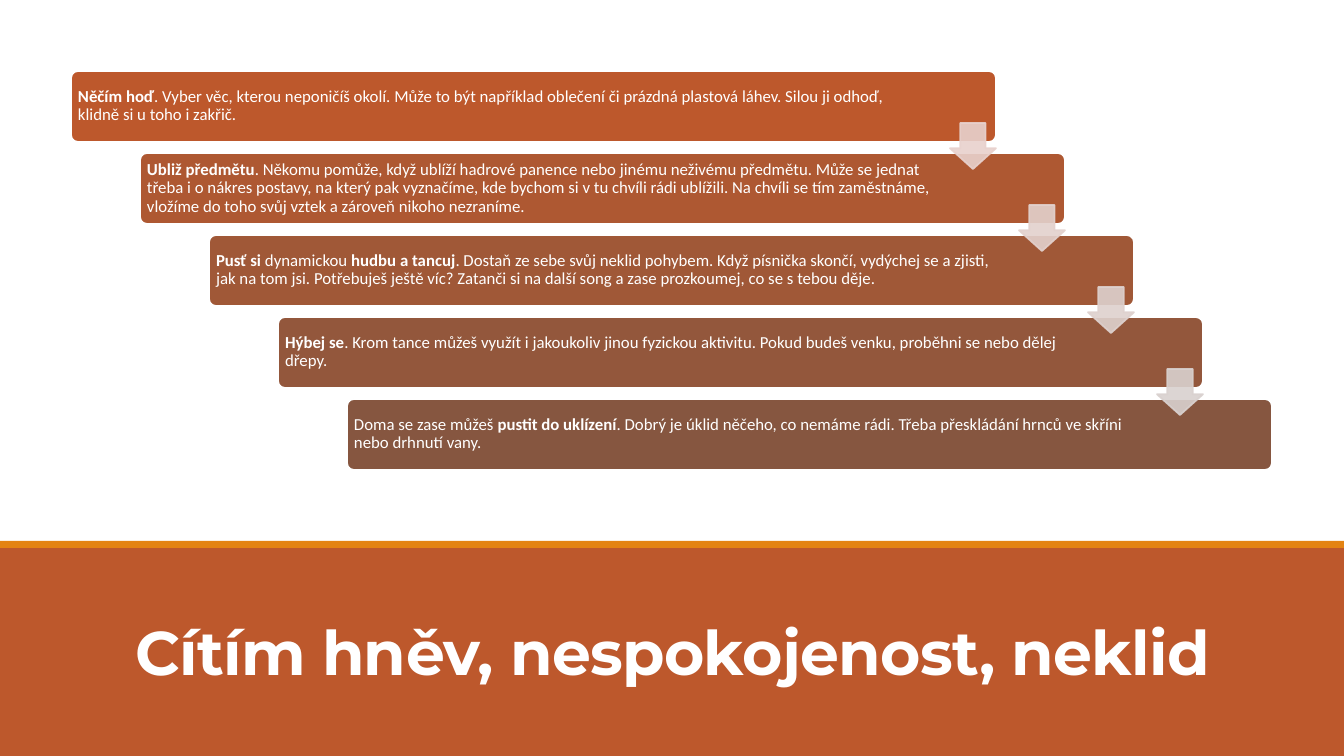
import lxml.etree
import pptx
import pptx.dml.color
import pptx.enum.shapes
import pptx.enum.text
import pptx.oxml.ns
import pptx.util

EMU_PER_PX = 914400 / 100.8
SHAPES = pptx.enum.shapes.MSO_SHAPE
ANCHOR = pptx.enum.text.MSO_ANCHOR


def px(*lengths):
    return [pptx.util.Emu(round(length * EMU_PER_PX)) for length in lengths]


def color(hex_string):
    return pptx.dml.color.RGBColor.from_string(hex_string)


presentation = pptx.Presentation()
presentation.slide_width, presentation.slide_height = px(1344, 756)
slide = presentation.slides.add_slide(presentation.slide_layouts[5])

# Title band with its accent stripe
for top, height, fill in [(546, 210, "BD582C"), (541, 7, "E48312")]:
    band = slide.shapes.add_shape(SHAPES.RECTANGLE, *px(0, top, 1344, height))
    band.shadow.inherit = False
    band.fill.solid()
    band.fill.fore_color.rgb = color(fill)
    band.line.fill.background()

# Title, lifted in front of the band
title = slide.shapes.title
slide.shapes._spTree.append(title._element)
title.left, title.top, title.width, title.height = px(118, 579, 1109, 114)
title.text_frame.text = "Cítím hněv, nespokojenost, neklid"
title.text_frame.word_wrap = True
title.text_frame.auto_size = pptx.enum.text.MSO_AUTO_SIZE.NONE
title.text_frame.vertical_anchor = ANCHOR.BOTTOM
paragraph = title.text_frame.paragraphs[0]
paragraph.alignment = pptx.enum.text.PP_ALIGN.CENTER
paragraph.line_spacing = 0.85
run = paragraph.runs[0]
run.font.name = "Montserrat"
run.font.size = pptx.util.Pt(44)
run.font.bold = True
run.font.color.rgb = color("FFFFFF")
run._r.get_or_add_rPr().set("spc", "-50")

# Steps: bar fill, text width, then text pieces as (text, bold)
steps = [
    ("BD582C", 840, [
        ("Něčím hoď", True),
        (". Vyber věc, kterou neponičíš okolí. Může to být například oblečení či "
         "prázdná plastová láhev. Silou ji odhoď, klidně si u toho i zakřič.", False)]),
    ("AE5832", 805, [
        ("Ubliž předmětu", True),
        (". Někomu pomůže, když ublíží hadrové panence nebo jinému neživému předmětu. "
         "Může se jednat třeba i o nákres postavy, na který pak vyznačíme, kde bychom "
         "si v tu chvíli rádi ublížili. Na chvíli se tím zaměstnáme, vložíme do toho "
         "svůj vztek a zároveň nikoho nezraníme.", False)]),
    ("A05837", 805, [
        ("Pusť si", True),
        (" dynamickou ", False),
        ("hudbu a tancuj", True),
        (". Dostaň ze sebe svůj neklid pohybem. Když písnička skončí, vydýchej se a "
         "zjisti, jak na tom jsi. Potřebuješ ještě víc? Zatanči si na další song a "
         "zase prozkoumej, co se s tebou děje.", False)]),
    ("93573C", 805, [
        ("Hýbej se", True),
        (". Krom tance můžeš využít i jakoukoliv jinou fyzickou aktivitu. Pokud budeš "
         "venku, proběhni se nebo dělej dřepy.", False)]),
    ("865640", 805, [
        ("Doma se zase můžeš ", False),
        ("pustit do uklízení", True),
        (". Dobrý je úklid něčeho, co nemáme rádi. Třeba přeskládání hrnců ve skříni "
         "nebo drhnutí vany.", False)]),
]
STEP_X, STEP_Y = 69, 82

# Staircase of bars
for index, (fill, text_width, pieces) in enumerate(steps):
    left, top = 71 + index * STEP_X, 71 + index * STEP_Y
    bar = slide.shapes.add_shape(SHAPES.ROUNDED_RECTANGLE, *px(left, top, 925, 71))
    bar.adjustments[0] = 0.1
    bar.shadow.inherit = False
    bar.fill.solid()
    bar.fill.fore_color.rgb = color(fill)
    bar.line.color.rgb = color("FFFFFF")
    bar.line.width = pptx.util.Pt(1.25)

    text_box = slide.shapes.add_textbox(*px(left + 2, top + 2, text_width, 67))
    frame = text_box.text_frame
    frame.word_wrap = True
    frame.vertical_anchor = ANCHOR.MIDDLE
    (frame.margin_left, frame.margin_top,
     frame.margin_right, frame.margin_bottom) = px(5, 5, 5, 5)
    paragraph = frame.paragraphs[0]
    paragraph.line_spacing = 0.9
    for text, bold in pieces:
        run = paragraph.add_run()
        run.text = text
        run.font.name = "Calibri"
        run.font.size = pptx.util.Pt(12)
        run.font.bold = bold
        run.font.color.rgb = color("FFFFFF")

# Translucent arrows from each bar to the next
for index, fill in enumerate(["E8D1CD", "E3D1CD", "DED1CE", "D9D1CF"]):
    arrow = slide.shapes.add_shape(
        SHAPES.DOWN_ARROW, *px(950 + index * STEP_X, 123 + index * STEP_Y, 46, 46))
    arrow.adjustments[0] = 0.55
    arrow.adjustments[1] = 0.45
    arrow.shadow.inherit = False
    arrow.fill.solid()
    arrow.fill.fore_color.rgb = color(fill)
    arrow.line.color.rgb = color(fill)
    arrow.line.width = pptx.util.Pt(1.25)
    for color_element in arrow._element.spPr.iter(pptx.oxml.ns.qn("a:srgbClr")):
        lxml.etree.SubElement(color_element, pptx.oxml.ns.qn("a:alpha"), val="90000")

presentation.save("out.pptx")
